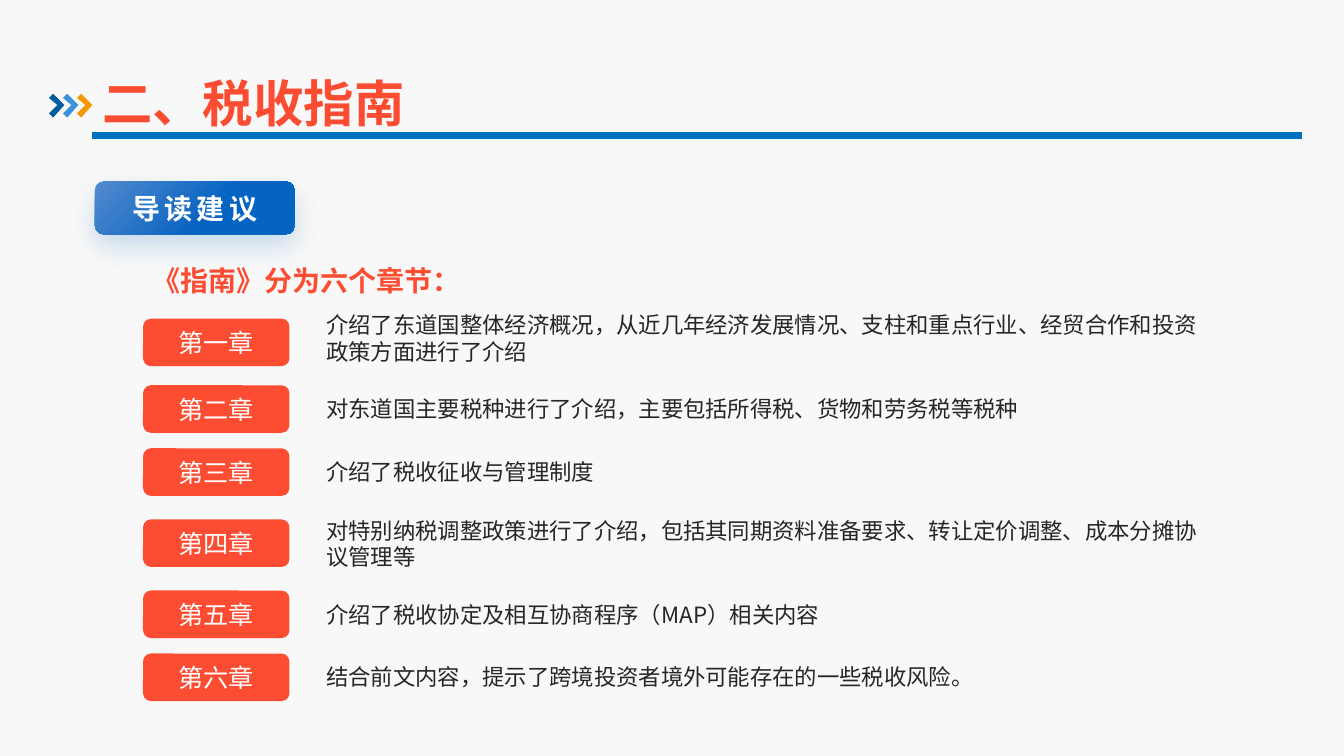
from dataclasses import dataclass

import pptx
import pptx.dml.color
import pptx.enum.dml
import pptx.enum.shapes
import pptx.enum.text
import pptx.oxml
import pptx.oxml.ns
import pptx.util

Pt = pptx.util.Pt
RGBColor = pptx.dml.color.RGBColor
MSO_SHAPE = pptx.enum.shapes.MSO_SHAPE
PP_ALIGN = pptx.enum.text.PP_ALIGN
MSO_ANCHOR = pptx.enum.text.MSO_ANCHOR

FONT = "Noto Sans CJK SC"
PAPER = RGBColor(0xF8, 0xF8, 0xF8)
RED = RGBColor(0xFC, 0x4D, 0x32)
WHITE = RGBColor(0xFF, 0xFF, 0xFF)
INK = RGBColor(0x26, 0x26, 0x26)
RULE_BLUE = RGBColor(0x00, 0x70, 0xC0)
BUTTON_LIGHT = RGBColor(0x53, 0x8A, 0xCE)
BUTTON_DARK = RGBColor(0x05, 0x63, 0xC1)
CHEVRON_COLORS = (
    RGBColor(0x00, 0x5D, 0xA2),
    RGBColor(0x39, 0x92, 0xDB),
    RGBColor(0xF7, 0x96, 0x00),
)
CHEVRON_OUTLINE = ((0, 3), (2.5, 0), (11, 8.4), (2.5, 16.8), (0, 13.8), (5.6, 8.4))


@dataclass(frozen=True)
class Chapter:
    label: str
    summary: str
    badge_top: float
    text_top: float
    text_height: float = 26.6


CHAPTERS = (
    Chapter("第一章", "介绍了东道国整体经济概况，从近几年经济发展情况、支柱和重点行业、经贸合作和投资政策方面进行了介绍", 227.6, 218.2, 46),
    Chapter("第二章", "对东道国主要税种进行了介绍，主要包括所得税、货物和劳务税等税种", 275.2, 278.6),
    Chapter("第三章", "介绍了税收征收与管理制度", 320.2, 323.8),
    Chapter("第四章", "对特别纳税调整政策进行了介绍，包括其同期资料准备要求、转让定价调整、成本分摊协议管理等", 371, 365.2, 46),
    Chapter("第五章", "介绍了税收协定及相互协商程序（MAP）相关内容", 421.8, 425.4),
    Chapter("第六章", "结合前文内容，提示了跨境投资者境外可能存在的一些税收风险。", 466.8, 470.2),
)


def write(sp, text: str, size: float, color: RGBColor, bold: bool = False,
          align=PP_ALIGN.LEFT, spacing: float = 0) -> None:
    tf = sp.text_frame
    tf.word_wrap = True
    tf.vertical_anchor = MSO_ANCHOR.MIDDLE
    p = tf.paragraphs[0]
    p.alignment = align
    r = p.add_run()
    r.text = text
    r.font.name = FONT
    r.font.size = Pt(size)
    r.font.bold = bold
    r.font.color.rgb = color
    rPr = r.font._element
    rPr.append(pptx.oxml.parse_xml(
        f'<a:ea {pptx.oxml.ns.nsdecls("a")} typeface="{FONT}"/>'))
    if spacing:
        rPr.set("spc", str(round(spacing * 100)))


def add_text(slide, left: float, top: float, width: float, height: float,
             text: str, size: float, color: RGBColor, bold: bool = False) -> None:
    sp = slide.shapes.add_textbox(Pt(left), Pt(top), Pt(width), Pt(height))
    write(sp, text, size, color, bold)


def add_box(slide, kind, left: float, top: float, width: float, height: float):
    sp = slide.shapes.add_shape(kind, Pt(left), Pt(top), Pt(width), Pt(height))
    sp.shadow.inherit = False
    sp.line.fill.background()
    return sp


def add_chevron(slide, left: float, top: float, color: RGBColor) -> None:
    points = [(left + x, top + y) for x, y in CHEVRON_OUTLINE]
    builder = slide.shapes.build_freeform(*points[0], scale=float(Pt(1)))
    builder.add_line_segments(points[1:], close=True)
    sp = builder.convert_to_shape()
    sp.shadow.inherit = False
    sp.fill.solid()
    sp.fill.fore_color.rgb = color
    sp.line.fill.background()


def add_header(slide) -> None:
    rule = slide.shapes.add_connector(
        pptx.enum.shapes.MSO_CONNECTOR.STRAIGHT, Pt(66), Pt(96.6), Pt(930), Pt(96.6))
    rule.line.color.rgb = RULE_BLUE
    rule.line.width = Pt(5)
    rule._element.spPr.append(pptx.oxml.parse_xml(
        f'<a:effectLst {pptx.oxml.ns.nsdecls("a")}/>'))
    for i, color in enumerate(CHEVRON_COLORS):
        add_chevron(slide, 35.2 + 10.1 * i, 67, color)
    title = slide.shapes.title
    title.left, title.top, title.width, title.height = Pt(73), Pt(51), Pt(887), Pt(44)
    tf = title.text_frame
    tf.margin_left = tf.margin_right = tf.margin_top = tf.margin_bottom = 0
    write(title, "二、税收指南", 36, RED, bold=True)


def add_guide_button(slide) -> None:
    sp = add_box(slide, MSO_SHAPE.FLOWCHART_ALTERNATE_PROCESS, 67.8, 129.6, 142.6, 37.8)
    sp.fill.gradient()
    sp.fill.gradient_angle = 315
    first, last = sp.fill.gradient_stops
    first.color.rgb, first.position = BUTTON_LIGHT, 0
    last.color.rgb, last.position = BUTTON_DARK, 0.6
    effects = sp._element.spPr.find(pptx.oxml.ns.qn("a:effectLst"))
    effects.append(pptx.oxml.parse_xml(
        f'<a:outerShdw {pptx.oxml.ns.nsdecls("a")} blurRad="{Pt(19)}" dist="{Pt(8)}" '
        f'dir="5400000" algn="t" rotWithShape="0"><a:srgbClr val="{BUTTON_DARK}">'
        '<a:alpha val="20000"/></a:srgbClr></a:outerShdw>'))
    write(sp, "导读建议", 20, WHITE, bold=True, align=PP_ALIGN.CENTER, spacing=3)


def add_chapter(slide, chapter: Chapter) -> None:
    add_text(slide, 226, chapter.text_top, 641, chapter.text_height,
             chapter.summary, 16, INK)
    sp = add_box(slide, MSO_SHAPE.ROUNDED_RECTANGLE, 102.2, chapter.badge_top, 104.6, 34)
    sp.fill.solid()
    sp.fill.fore_color.rgb = RED
    write(sp, chapter.label, 18, WHITE, align=PP_ALIGN.CENTER)


def main() -> None:
    prs = pptx.Presentation()
    prs.slide_width, prs.slide_height = Pt(960), Pt(540)
    slide = prs.slides.add_slide(prs.slide_layouts.get_by_name("Title Only"))
    slide.background.fill.solid()
    slide.background.fill.fore_color.rgb = PAPER
    add_header(slide)
    add_guide_button(slide)
    add_text(slide, 101.6, 184.4, 579.6, 31.6, "《指南》分为六个章节：", 20, RED, bold=True)
    for chapter in CHAPTERS:
        add_chapter(slide, chapter)
    prs.save("out.pptx")


if __name__ == "__main__":
    main()
